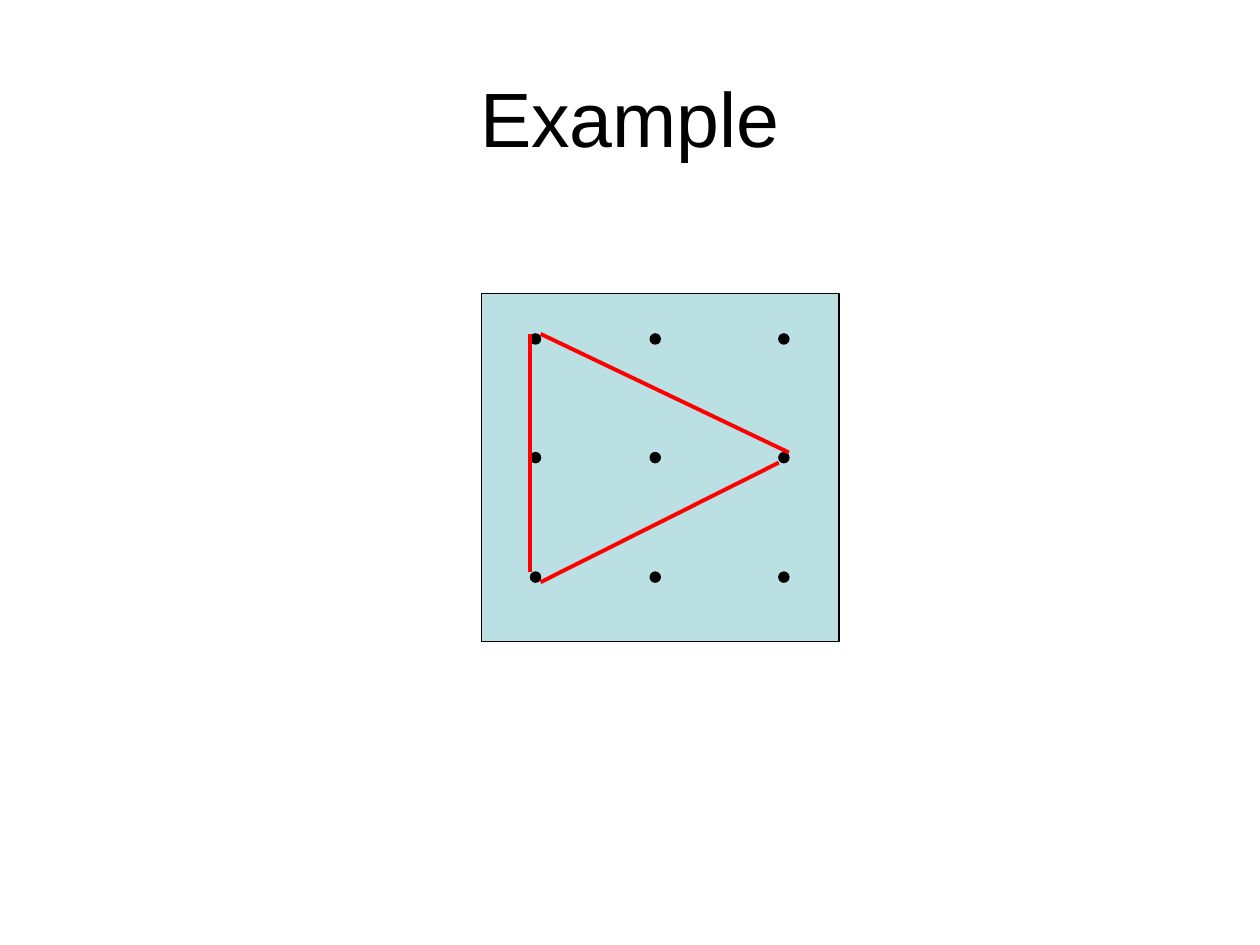
from lxml import etree
from pptx import Presentation
from pptx.dml.color import RGBColor
from pptx.enum.shapes import MSO_CONNECTOR, MSO_SHAPE
from pptx.enum.text import MSO_ANCHOR, PP_ALIGN
from pptx.oxml.ns import qn
from pptx.util import Pt

RECTANGLE, OVAL = MSO_SHAPE.RECTANGLE, MSO_SHAPE.OVAL
STRAIGHT = MSO_CONNECTOR.STRAIGHT
MIDDLE, CENTER = MSO_ANCHOR.MIDDLE, PP_ALIGN.CENTER

TITLE = "Example"
TITLE_FRAME = (36, 21.6, 648, 90)
BOARD_FRAME = (275, 167.75, 204.5, 198.75)
PEG_COLUMNS = (303.1, 371.5, 445)
PEG_ROWS = (190.8, 258.6, 326.9)
PEG_SIZE = 5.8
LEFT, RIGHT = PEG_COLUMNS[0], PEG_COLUMNS[-1]
TOP, MIDWAY, BOTTOM = PEG_ROWS
BAND_SIDES = [
    ((LEFT + PEG_SIZE, TOP), (RIGHT + PEG_SIZE, MIDWAY)),
    ((LEFT, TOP), (LEFT, BOTTOM)),
    ((LEFT + PEG_SIZE, BOTTOM + PEG_SIZE), (RIGHT, MIDWAY + PEG_SIZE)),
]
BLACK, BOARD_BLUE, BAND_RED = "000000", "BBE0E3", "FF0000"


def color(value):
    """Return the colour for a hex string."""
    return RGBColor.from_string(value)


def add_title(slide):
    """Place and format the slide title."""
    title = slide.shapes.title
    title.left, title.top, title.width, title.height = map(Pt, TITLE_FRAME)
    frame = title.text_frame
    frame.text = TITLE
    frame.vertical_anchor = MIDDLE
    para = frame.paragraphs[0]
    para.alignment = CENTER
    font = para.runs[0].font
    font.name, font.size = "Arial", Pt(44)
    font.color.rgb = color(BLACK)


def add_outlined(shapes, kind, frame, fill):
    """Add a filled shape with a thin black outline."""
    shape = shapes.add_shape(kind, *map(Pt, frame))
    shape.shadow.inherit = False
    shape.fill.solid()
    shape.fill.fore_color.rgb = color(fill)
    shape.line.color.rgb = color(BLACK)
    shape.line.width = Pt(0.75)


def add_band_side(slide, start, end):
    """Add one straight side of the rubber band."""
    side = slide.shapes.add_connector(STRAIGHT, *map(Pt, start + end))
    side.line.color.rgb = color(BAND_RED)
    side.line.width = Pt(2.25)
    etree.SubElement(side._element.spPr, qn("a:effectLst"))


def main():
    """Build the geoboard slide."""
    deck = Presentation()
    deck.slide_width, deck.slide_height = Pt(720), Pt(540)
    slide = deck.slides.add_slide(deck.slide_layouts[5])
    add_title(slide)
    geoboard = slide.shapes.add_group_shape().shapes
    add_outlined(geoboard, RECTANGLE, BOARD_FRAME, BOARD_BLUE)
    for top in PEG_ROWS:
        for left in PEG_COLUMNS:
            add_outlined(geoboard, OVAL, (left, top, PEG_SIZE, PEG_SIZE), BLACK)
    for start, end in BAND_SIDES:
        add_band_side(slide, start, end)
    deck.save("out.pptx")


if __name__ == "__main__":
    main()
